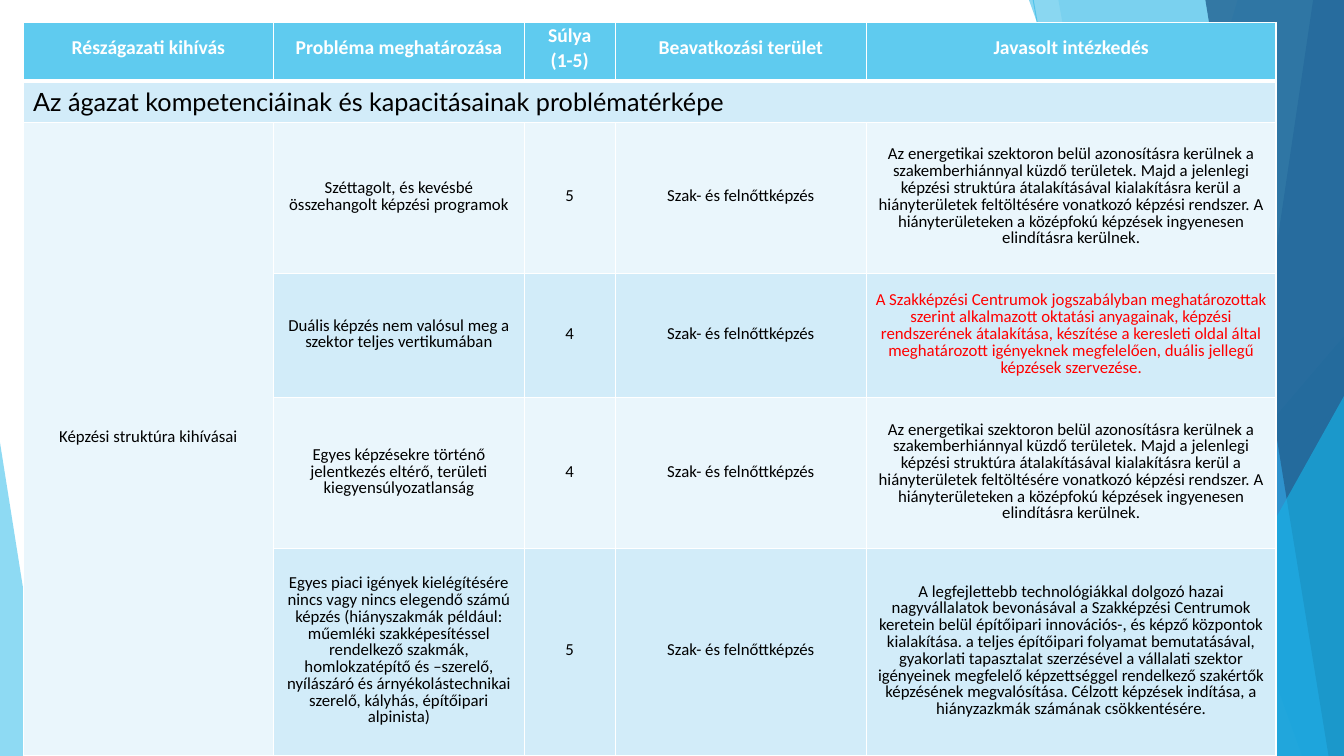
"""Build the problem map slide for sector competences and capacities."""
from lxml.etree import SubElement
from pptx import Presentation
from pptx.dml.color import RGBColor
from pptx.enum.shapes import MSO_CONNECTOR, MSO_SHAPE
from pptx.enum.text import MSO_ANCHOR, PP_ALIGN
from pptx.oxml.ns import qn
from pptx.util import Pt

WHITE = RGBColor(0xFF, 0xFF, 0xFF)
BLACK = RGBColor(0, 0, 0)
RED = RGBColor(0xFF, 0, 0)
SKY = RGBColor(0x5F, 0xCB, 0xEF)
CYAN = RGBColor(0x17, 0xB0, 0xE4)
BLUE = RGBColor(0x2E, 0x83, 0xC3)
NAVY = RGBColor(0x22, 0x62, 0x92)
PALE = RGBColor(0xEA, 0xF6, 0xFC)
LIGHT = RGBColor(0xD2, 0xEC, 0xF9)

HEADERS = ["Részágazati kihívás", "Probléma meghatározása", "Súlya\n(1-5)",
           "Beavatkozási terület", "Javasolt intézkedés"]
SECTION = "Az ágazat kompetenciáinak és kapacitásainak problématérképe"
CHALLENGE = "Képzési struktúra kihívásai"
AREA = "Szak- és felnőttképzés"
SHORTAGE_MEASURE = (
    "Az energetikai szektoron belül azonosításra kerülnek a szakemberhiánnyal küzdő "
    "területek. Majd a jelenlegi képzési struktúra átalakításával kialakításra kerül a "
    "hiányterületek feltöltésére vonatkozó képzési rendszer. A hiányterületeken a "
    "középfokú képzések ingyenesen elindításra kerülnek.")
DUAL_MEASURE = (
    "A Szakképzési Centrumok jogszabályban meghatározottak szerint alkalmazott oktatási "
    "anyagainak, képzési rendszerének átalakítása, készítése a keresleti oldal által "
    "meghatározott igényeknek megfelelően, duális jellegű képzések szervezése.")
INNOVATION_MEASURE = (
    "A legfejlettebb technológiákkal dolgozó hazai nagyvállalatok bevonásával a "
    "Szakképzési Centrumok keretein belül építőipari innovációs-, és képző központok "
    "kialakítása. a teljes építőipari folyamat bemutatásával, gyakorlati tapasztalat "
    "szerzésével a vállalati szektor igényeinek megfelelő képzettséggel rendelkező "
    "szakértők képzésének megvalósítása. Célzott képzések indítása, a hiányzazkmák "
    "számának csökkentésére.")
PROBLEMS = [
    ("Széttagolt, és kevésbé összehangolt képzési programok", "5", SHORTAGE_MEASURE),
    ("Duális képzés nem valósul meg a szektor teljes vertikumában", "4", DUAL_MEASURE),
    ("Egyes képzésekre történő jelentkezés eltérő, területi kiegyensúlyozatlanság", "4",
     SHORTAGE_MEASURE),
    ("Egyes piaci igények kielégítésére nincs vagy nincs elegendő számú képzés "
     "(hiányszakmák például: műemléki szakképesítéssel rendelkező szakmák, "
     "homlokzatépítő és –szerelő, nyílászáró és árnyékolástechnikai szerelő, kályhás, "
     "építőipari alpinista)", "5", INNOVATION_MEASURE),
]

WIDTH, HEIGHT = 960, 540
TABLE_LEFT, TABLE_TOP = 16.5, 16
COLUMN_WIDTHS = [179, 179, 65, 179.5, 292.5]
ROW_HEIGHTS = [42, 29.5, 108, 88.5, 108, 147.5]

RAYS = [(738, 0, 834, HEIGHT), (WIDTH, 290, 584.5, HEIGHT)]
# Bands: top-left x, bottom-left x. Triangles: left, top, width, apex.
FACETS = [
    ((884, 723), SKY, 36),
    ((756, 852), SKY, 20),
    ((703.5, 240, 256.5, 1), CYAN, 66),
    ((735, 930), CYAN, 50),
    ((938, 858), BLUE, 70),
    ((861, 949), NAVY, 80),
    ((816.5, 283, 143.5, 1), CYAN, 66),
    ((0, 316, 35.5, 0), SKY, 70),
]


def set_opacity(color_format_owner, percent):
    for color in color_format_owner.iter(qn("a:srgbClr")):
        SubElement(color, qn("a:alpha"), val=str(percent * 1000))


def add_ray(slide, ends):
    ray = slide.shapes.add_connector(MSO_CONNECTOR.STRAIGHT, *map(Pt, ends))
    ray.line.color.rgb = SKY
    ray.line.width = Pt(0.75)
    properties = ray.element.spPr
    set_opacity(properties, 70)
    SubElement(properties, qn("a:effectLst"))


def add_facet(slide, geometry, color, opacity):
    if len(geometry) == 2:
        top_x, bottom_x = geometry
        builder = slide.shapes.build_freeform(Pt(top_x), 0)
        corners = [(WIDTH, 0), (WIDTH, HEIGHT), (bottom_x, HEIGHT)]
        builder.add_line_segments([(Pt(x), Pt(y)) for x, y in corners], close=True)
        shape = builder.convert_to_shape()
    else:
        left, top, width, apex = geometry
        shape = slide.shapes.add_shape(MSO_SHAPE.ISOSCELES_TRIANGLE, Pt(left), Pt(top),
                                       Pt(width), Pt(HEIGHT - top))
        shape.adjustments[0] = apex
    shape.shadow.inherit = False
    shape.fill.solid()
    shape.fill.fore_color.rgb = color
    set_opacity(shape.element.spPr, opacity)
    shape.line.fill.background()


def style_cell(cell, row):
    properties = cell._tc.get_or_add_tcPr()
    for side in ("L", "R", "T", "B"):
        thick = (row, side) in ((0, "B"), (1, "T"))
        border = SubElement(properties, qn(f"a:ln{side}"), w=str(Pt(3 if thick else 1)))
        SubElement(SubElement(border, qn("a:solidFill")), qn("a:srgbClr"), val=str(WHITE))
    cell.fill.solid()
    cell.fill.fore_color.rgb = SKY if row == 0 else LIGHT if row % 2 else PALE


def write_cell(cell, text, size, color, bold=False):
    cell.text = text
    cell.vertical_anchor = MSO_ANCHOR.MIDDLE
    cell.margin_left = cell.margin_right = Pt(5)
    cell.margin_top = cell.margin_bottom = 0
    for paragraph in cell.text_frame.paragraphs:
        paragraph.alignment = PP_ALIGN.CENTER
        paragraph.line_spacing = Pt(12)
        paragraph.space_before = paragraph.space_after = Pt(3)
        set_font(paragraph.font, "Calibri", size, color, bold)


def set_font(font, name, size, color, bold):
    font.name, font.size, font.bold = name, Pt(size), bold
    font.color.rgb = color


def add_problem_table(slide):
    table = slide.shapes.add_table(
        len(ROW_HEIGHTS), len(COLUMN_WIDTHS), Pt(TABLE_LEFT), Pt(TABLE_TOP),
        Pt(sum(COLUMN_WIDTHS)), Pt(sum(ROW_HEIGHTS))).table
    for column, width in zip(table.columns, COLUMN_WIDTHS):
        column.width = Pt(width)
    for index, height in enumerate(ROW_HEIGHTS):
        table.rows[index].height = Pt(height)
        for cell in table.rows[index].cells:
            style_cell(cell, index)

    for column, header in enumerate(HEADERS):
        write_cell(table.cell(0, column), header, 14, WHITE, bold=True)

    section = table.cell(1, 0)
    section.merge(table.cell(1, len(HEADERS) - 1))
    section.text = SECTION
    set_font(section.text_frame.paragraphs[0].font, "Lato", 18, BLACK, False)

    challenge = table.cell(2, 0)
    challenge.merge(table.cell(len(ROW_HEIGHTS) - 1, 0))
    write_cell(challenge, CHALLENGE, 12, BLACK)
    for row, (problem, weight, measure) in enumerate(PROBLEMS, start=2):
        for column, text in enumerate((problem, weight, AREA, measure), start=1):
            color = RED if text == DUAL_MEASURE else BLACK
            write_cell(table.cell(row, column), text, 12, color)


def main():
    presentation = Presentation()
    presentation.slide_width, presentation.slide_height = Pt(WIDTH), Pt(HEIGHT)
    slide = presentation.slides.add_slide(presentation.slide_layouts[6])
    for ends in RAYS:
        add_ray(slide, ends)
    for geometry, color, opacity in FACETS:
        add_facet(slide, geometry, color, opacity)
    add_problem_table(slide)
    presentation.save("out.pptx")


if __name__ == "__main__":
    main()
